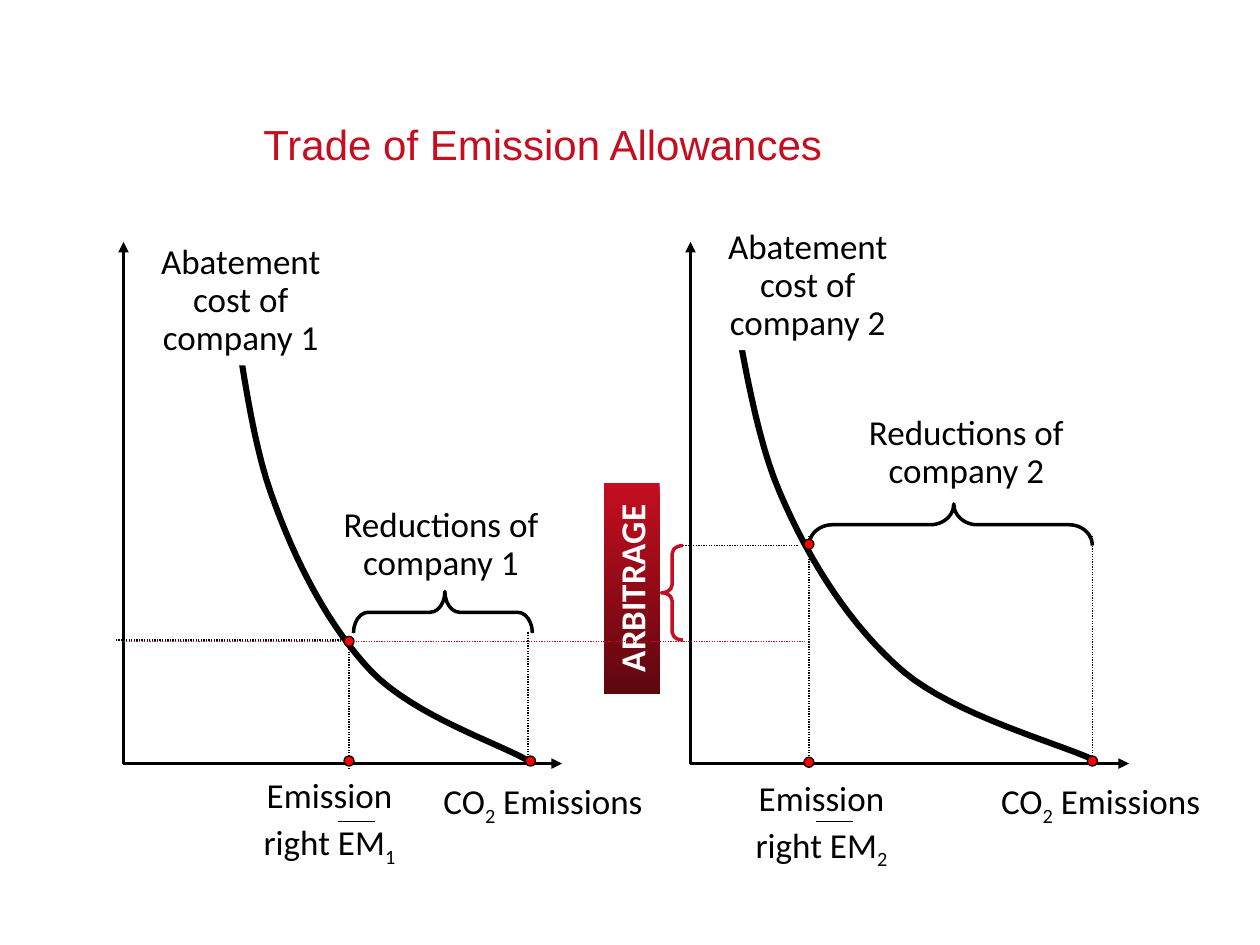
from dataclasses import dataclass

from lxml import etree
from pptx import Presentation
from pptx.dml.color import RGBColor
from pptx.enum.dml import MSO_LINE
from pptx.enum.shapes import MSO_CONNECTOR, MSO_SHAPE
from pptx.enum.text import MSO_ANCHOR, MSO_AUTO_SIZE, PP_ALIGN
from pptx.oxml.ns import qn
from pptx.util import Inches, Pt

BLACK, WHITE, RED, CRIMSON, DARK = "000000", "FFFFFF", "FF0000", "C50E1F", "5E070F"
STRAIGHT = MSO_CONNECTOR.STRAIGHT
DOTTED = MSO_LINE.ROUND_DOT
OVAL, BRACE = MSO_SHAPE.OVAL, MSO_SHAPE.LEFT_BRACE
CENTER = PP_ALIGN.CENTER
BOTTOM = MSO_ANCHOR.BOTTOM
GROW, NO_FIT = MSO_AUTO_SIZE.SHAPE_TO_FIT_TEXT, MSO_AUTO_SIZE.NONE

Point = tuple[float, float]
Frame = tuple[float, float, float, float]

AXIS_Y, AXIS_TOP, AXIS_LENGTH = 6.06, 1.92, 3.48
CURVE_TOP, CURVE_HEIGHT, CURVE_STEPS = 1.99, 4.04, 16
DOT = 0.08
CURVE = [
    (0, 0), (0.024, 0.08), (0.068, 0.34), (0.15, 0.475), (0.232, 0.614),
    (0.345, 0.74), (0.485, 0.827), (0.628, 0.913), (0.894, 0.965), (1, 1),
]


@dataclass
class Label:
    text: str
    frame: Frame
    spacing: float = 1.1
    fill: str | None = None


@dataclass
class Company:
    origin: float
    curve_left: float
    curve_width: float
    labels: list[Label]
    guides: list[tuple[Point, Point]]
    brace: Frame
    brace_curl: float
    dots: list[Point]
    bar: Point


COMPANIES = [
    Company(
        5.48, 5.75, 2.93,
        [
            Label("CO|2| Emissions", (7.8, 6.1, 1.87, 0.47)),
            Label("Emission right EM|2", (5.76, 6.08, 1.52, 0.84)),
            Label("Abatement cost of company 2", (5.57, 1.77, 1.68, 1.01), 0.9, WHITE),
            Label("Reductions of company 2", (6.75, 3.25, 1.84, 0.71), 0.9, WHITE),
        ],
        [((6.42, 4.25), (6.42, 6.08)), ((6.33, 4.33), (5.42, 4.33)), ((8.67, 4.25), (8.67, 6))],
        (7.38, 3.04, 0.33, 2.25), 0.565,
        [(6.38, 4.28), (8.63, 6), (6.38, 6.01)],
        (6.48, 6.77),
    ),
    Company(
        0.98, 1.79, 2.39,
        [
            Label("CO|2| Emissions", (3.38, 6.1, 1.86, 0.47)),
            Label("Emission right EM|1", (1.94, 6.06, 1.35, 0.84)),
            Label("Abatement cost of company 1", (1.07, 1.89, 1.68, 1.01), 0.9, WHITE),
            Label("Reductions of company 1", (2.58, 3.98, 1.84, 0.71), 0.9, WHITE),
        ],
        [((2.77, 5.11), (2.77, 6.11)), ((2.75, 5.08), (0.92, 5.08)), ((4.19, 5.02), (4.19, 6.02))],
        (3.35, 4.15, 0.33, 1.42), 0.356,
        [(4.17, 6), (2.73, 5.05), (2.73, 6)],
        (2.68, 2.98),
    ),
]


def color(value: str) -> RGBColor:
    return RGBColor.from_string(value)


def inches(values) -> list[int]:
    return [Inches(value) for value in values]


def add_line(page, start: Point, end: Point, stroke=BLACK, width=0.75, dash=None, arrow=False):
    line = page.shapes.add_connector(STRAIGHT, *inches(start + end))
    line.line.color.rgb = color(stroke)
    line.line.width = Pt(width)
    if dash:
        line.line.dash_style = dash
    if arrow:
        etree.SubElement(line.line._get_or_add_ln(), qn("a:tailEnd"), type="triangle")
    etree.SubElement(line._element.spPr, qn("a:effectLst"))


def add_brace(page, frame: Frame, curl: float, tip: float, stroke=BLACK, rotation=0):
    brace = page.shapes.add_shape(BRACE, *inches(frame))
    brace.shadow.inherit = False
    brace.rotation = rotation
    brace.adjustments[0] = curl
    brace.adjustments[1] = tip
    brace.fill.background()
    brace.line.color.rgb = color(stroke)
    brace.line.width = Pt(2)


def add_dot(page, corner: Point):
    dot = page.shapes.add_shape(OVAL, *inches(corner + (DOT, DOT)))
    dot.shadow.inherit = False
    dot.fill.solid()
    dot.fill.fore_color.rgb = color(RED)
    dot.line.color.rgb = color(BLACK)
    dot.line.width = Pt(0.75)


def add_label(page, label: Label, ink=BLACK, bold=False):
    box = page.shapes.add_textbox(*inches(label.frame))
    if label.fill:
        box.fill.solid()
        box.fill.fore_color.rgb = color(label.fill)
    box.text_frame.word_wrap = True
    box.text_frame.auto_size = GROW
    para = box.text_frame.paragraphs[0]
    para.alignment = CENTER
    para.line_spacing = label.spacing
    para.font.name = "Calibri"
    para.font.size = Pt(20)
    para.font.bold = bold
    para.font.color.rgb = color(ink)
    for index, text in enumerate(label.text.split("|")):
        span = para.add_run()
        span.text = text
        if index % 2:
            span.font._element.set("baseline", "-25000")
    return box


def curve_points(company: Company) -> list[Point]:
    points = []
    for first in range(0, len(CURVE) - 1, 3):
        controls = CURVE[first:first + 4]
        for step in range(CURVE_STEPS + 1):
            t = step / CURVE_STEPS
            weights = ((1 - t) ** 3, 3 * t * (1 - t) ** 2, 3 * t * t * (1 - t), t ** 3)
            x, y = (sum(w * c[axis] for w, c in zip(weights, controls)) for axis in (0, 1))
            points.append((company.curve_left + x * company.curve_width, CURVE_TOP + y * CURVE_HEIGHT))
    return points


def add_curve(page, company: Company):
    points = [tuple(inches(point)) for point in curve_points(company)]
    builder = page.shapes.build_freeform(*points[0])
    builder.add_line_segments(points[1:], close=False)
    curve = builder.convert_to_shape()
    curve.shadow.inherit = False
    curve.fill.background()
    curve.line.color.rgb = color(BLACK)
    curve.line.width = Pt(3.5)


def add_company(page, company: Company):
    corner = (company.origin, AXIS_Y)
    for end in ((company.origin + AXIS_LENGTH, AXIS_Y), (company.origin, AXIS_TOP)):
        add_line(page, corner, end, width=2, arrow=True)
    add_curve(page, company)
    for label in company.labels:
        add_label(page, label)
    for start, end in company.guides:
        add_line(page, start, end, dash=DOTTED)
    add_brace(page, company.brace, company.brace_curl, 0.489, rotation=90)
    left, right = company.bar
    add_line(page, (left, 6.52), (right, 6.52))


def add_arbitrage(page):
    add_brace(page, (5.25, 4.33, 0.17, 0.75), 0.375, 0.5, CRIMSON)
    box = add_label(page, Label("ARBITRAGE", (4.18, 4.45, 1.67, 0.44), 1), WHITE, True)
    box.rotation = 270
    box.fill.gradient()
    box.fill.gradient_angle = 180
    for stop, value in zip(box.fill.gradient_stops, (CRIMSON, DARK)):
        stop.color.rgb = color(value)
    add_line(page, (0.98, 5.09), (6.39, 5.09), CRIMSON, dash=DOTTED)


def add_title(page):
    title = page.shapes.title
    title.left, title.top, title.width, title.height = inches((2.09, 0.42, 7.5, 0.92))
    frame = title.text_frame
    frame.margin_left = frame.margin_top = frame.margin_right = frame.margin_bottom = 0
    frame.vertical_anchor = BOTTOM
    frame.auto_size = NO_FIT
    frame.text = "Trade of Emission Allowances"
    para = frame.paragraphs[0]
    para.alignment = PP_ALIGN.LEFT
    para.line_spacing = Pt(30)
    para.font.name = "Arial"
    para.font.size = Pt(24)
    para.font.color.rgb = color(CRIMSON)


def main():
    deck = Presentation()
    deck.slide_width, deck.slide_height = inches((10, 7.5))
    page = deck.slides.add_slide(deck.slide_layouts[5])
    add_title(page)
    for company in COMPANIES:
        add_company(page, company)
    add_arbitrage(page)
    for company in COMPANIES:
        for corner in company.dots:
            add_dot(page, corner)
    deck.save("out.pptx")


if __name__ == "__main__":
    main()
